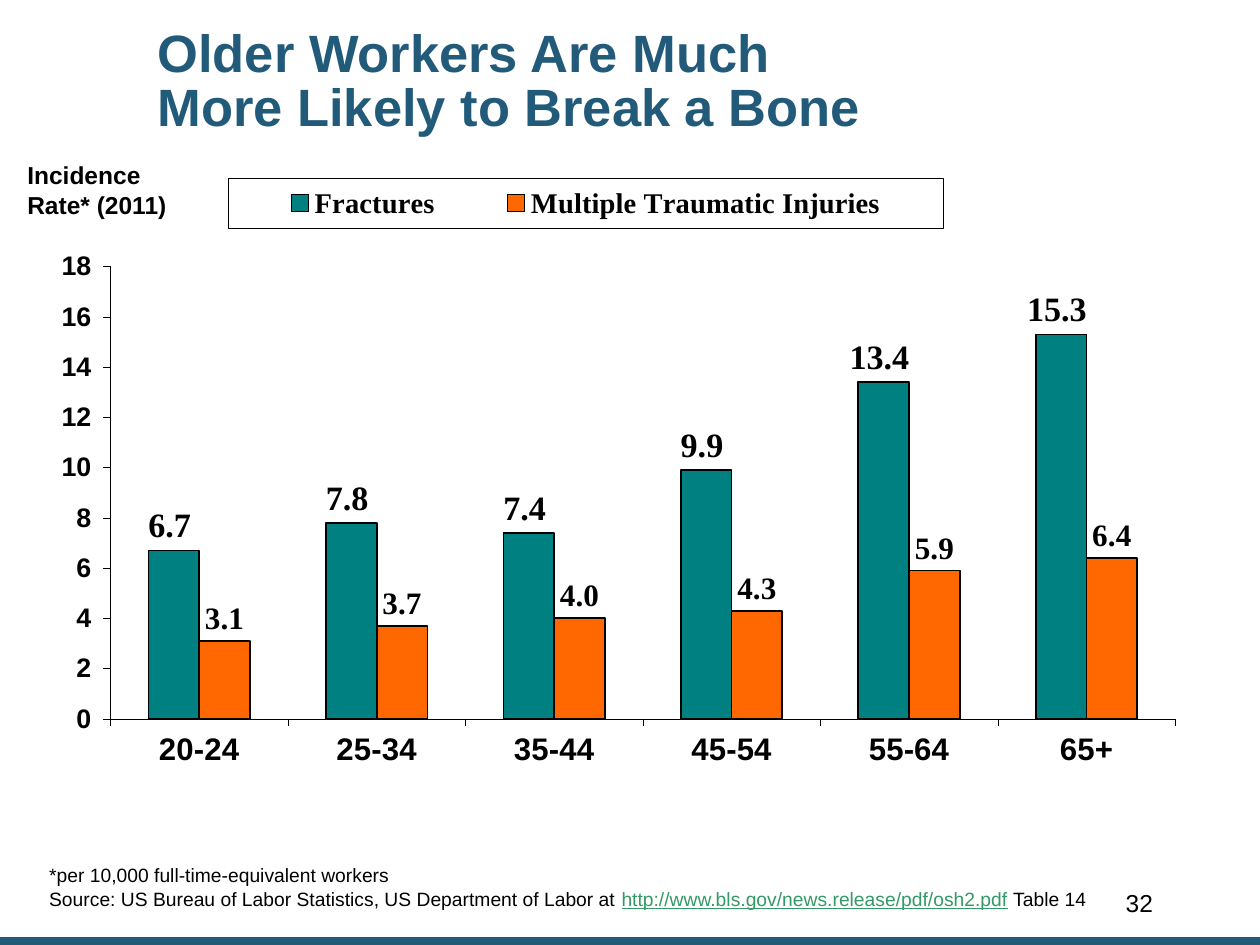
from lxml.etree import SubElement
from pptx import Presentation
from pptx.chart.data import CategoryChartData
from pptx.dml.color import RGBColor
from pptx.enum.chart import XL_CHART_TYPE, XL_LABEL_POSITION, XL_LEGEND_POSITION, XL_TICK_MARK
from pptx.enum.shapes import MSO_SHAPE
from pptx.enum.text import MSO_ANCHOR, PP_ALIGN
from pptx.oxml.ns import qn
from pptx.util import Pt

COLORS = {"blue": "225A7A", "black": "000000", "teal": "008080",
          "orange": "FF6801", "link": "339966", "white": "FFFFFF"}
AGES = ["20-24", "25-34", "35-44", "45-54", "55-64", "65+"]
SERIES = [
    {"name": "Fractures", "values": [6.7, 7.8, 7.4, 9.9, 13.4, 15.3], "color": "teal",
     "size": 19.5, "number_format": r"#,##0.0_);[Red]\(#,##0.0\)"},
    {"name": "Multiple Traumatic Injuries", "values": [3.1, 3.7, 4.0, 4.3, 5.9, 6.4],
     "color": "orange", "size": 17.8, "number_format": "0.0"},
]


def rgb(name):
    """Return the named colour."""
    return RGBColor.from_string(COLORS[name])


def format_font(font, size, name="Arial", color="black", **values):
    """Set the face, size, colour and further values of a font."""
    for key, value in {"name": name, "size": Pt(size), **values}.items():
        setattr(font, key, value)
    font.color.rgb = rgb(color)


def format_line(line, width):
    """Give a line black ink and a width."""
    line.color.rgb = rgb("black")
    line.width = Pt(width)


def add_text(slide, box, runs, wrap=True, anchor=MSO_ANCHOR.TOP, **paragraph_values):
    """Add a one-paragraph text box made of (text, font values) runs."""
    frame = slide.shapes.add_textbox(*map(Pt, box)).text_frame
    frame.word_wrap = wrap
    frame.vertical_anchor = anchor
    paragraph = frame.paragraphs[0]
    for key, value in paragraph_values.items():
        setattr(paragraph, key, value)
    for index, (text, values) in enumerate(runs):
        for line_index, line in enumerate(text.split("\n")):
            if line_index:
                paragraph.add_line_break()
            run = paragraph.add_run()
            run.text = line
            format_font(run.font, **values)
    return paragraph


def add_title(slide, box):
    """Add the indented two-line heading."""
    paragraph = add_text(
        slide, box,
        [("Older Workers Are Much\nMore Likely to Break a Bone",
          {"size": 30, "color": "blue", "bold": True})],
        line_spacing=0.85)
    paragraph._p.get_or_add_pPr().set("marL", str(Pt(83)))


def set_layout(parent, position, inner=False):
    """Place a chart part by fractions of the chart area."""
    layout = parent.find(qn("c:layout"))
    if layout is None:
        layout = SubElement(parent, qn("c:layout"))
    manual = SubElement(layout, qn("c:manualLayout"))
    if inner:
        SubElement(manual, qn("c:layoutTarget"), val="inner")
    for tag in ("xMode", "yMode"):
        SubElement(manual, qn(f"c:{tag}"), val="edge")
    for tag, value in zip("xywh", position):
        SubElement(manual, qn(f"c:{tag}"), val=str(value))
    return layout


def format_axis(axis, size):
    """Style an axis line, its ticks and its labels."""
    for key, value in {"has_major_gridlines": False, "major_tick_mark": XL_TICK_MARK.OUTSIDE,
                       "minor_tick_mark": XL_TICK_MARK.NONE}.items():
        setattr(axis, key, value)
    format_line(axis.format.line, 0.25)
    format_font(axis.tick_labels.font, size, bold=True)


def format_legend(chart):
    """Add a framed legend above the columns."""
    chart.has_legend = True
    legend = chart.legend
    legend.position = XL_LEGEND_POSITION.TOP
    legend.include_in_layout = False
    format_font(legend.font, 16.3, "Times New Roman", bold=True)
    element = legend._element
    layout = set_layout(element, (0.155, 0.003, 0.59, 0.078))
    element.find(qn("c:legendPos")).addnext(layout)
    properties = element.makeelement(qn("c:spPr"))
    element.find(qn("c:txPr")).addprevious(properties)
    line = SubElement(properties, qn("a:ln"), w=str(Pt(0.25)))
    fill = SubElement(line, qn("a:solidFill"))
    SubElement(fill, qn("a:srgbClr"), val=COLORS["black"])


def format_series(series, style):
    """Colour one set of columns and its value labels."""
    series.format.fill.solid()
    series.format.fill.fore_color.rgb = rgb(style["color"])
    format_line(series.format.line, 1)
    labels = series.data_labels
    for key, value in {"show_value": True, "position": XL_LABEL_POSITION.OUTSIDE_END,
                       "number_format": style["number_format"],
                       "number_format_is_linked": False}.items():
        setattr(labels, key, value)
    format_font(labels.font, style["size"], "Times New Roman", bold=True)


def add_injury_chart(slide, box):
    """Add the clustered columns of injury rates by age."""
    data = CategoryChartData()
    data.categories = AGES
    for style in SERIES:
        data.add_series(style["name"], style["values"])
    chart = slide.shapes.add_chart(XL_CHART_TYPE.COLUMN_CLUSTERED, *map(Pt, box), data).chart
    chart.has_title = False
    format_font(chart.font, 17.8, "Times New Roman", bold=True)
    format_axis(chart.category_axis, 17.8)
    format_axis(chart.value_axis, 15.3)
    for key, value in {"minimum_scale": 0, "maximum_scale": 18, "major_unit": 2}.items():
        setattr(chart.value_axis, key, value)
    tick_labels = chart.value_axis.tick_labels
    tick_labels.number_format = r"#,##0_);[Red]\(#,##0\)"
    tick_labels.number_format_is_linked = False
    plot = chart.plots[0]
    for key, value in {"gap_width": 150, "overlap": 0, "vary_by_categories": False}.items():
        setattr(plot, key, value)
    for series, style in zip(plot.series, SERIES):
        format_series(series, style)
    format_legend(chart)
    plot_area = plot._element.getparent()
    plot_area.insert(0, set_layout(plot_area, (0.058, 0.142, 0.878, 0.714), inner=True))


def add_footer(slide, box):
    """Add the source note, the page number and the bottom band."""
    left, top, width, height = box
    band = slide.shapes.add_shape(MSO_SHAPE.RECTANGLE, Pt(left), Pt(top + height - 4.5),
                                  Pt(width), Pt(4.5))
    band.shadow.inherit = False
    band.fill.solid()
    band.fill.fore_color.rgb = rgb("blue")
    band.line.fill.background()
    add_text(slide, (left + 516, top + 8, 150, 36), [("32", {"size": 14})],
             wrap=False, anchor=MSO_ANCHOR.MIDDLE, alignment=PP_ALIGN.RIGHT)
    add_text(slide, (left + 21, top, 616, 34), [
        ("*per 10,000 full-time-equivalent workers\nSource: US Bureau of Labor Statistics, "
         "US Department of Labor at ", {"size": 11}),
        ("http://www.bls.gov/news.release/pdf/osh2.pdf",
         {"size": 11, "color": "link", "underline": True}),
        (" Table 14", {"size": 11})])


def main():
    """Build and save the slide."""
    presentation = Presentation()
    presentation.slide_width, presentation.slide_height = Pt(720), Pt(540)
    slide = presentation.slides.add_slide(presentation.slide_layouts[6])
    slide.background.fill.solid()
    slide.background.fill.fore_color.rgb = rgb("white")
    add_title(slide, (0, 13.5, 582, 49))
    add_injury_chart(slide, (23, 101, 693, 362))
    add_footer(slide, (0, 490, 720, 50))
    add_text(slide, (8.5, 88, 104, 41),
             [("Incidence Rate* (2011)", {"size": 14, "bold": True})])
    presentation.save("out.pptx")


if __name__ == "__main__":
    main()
